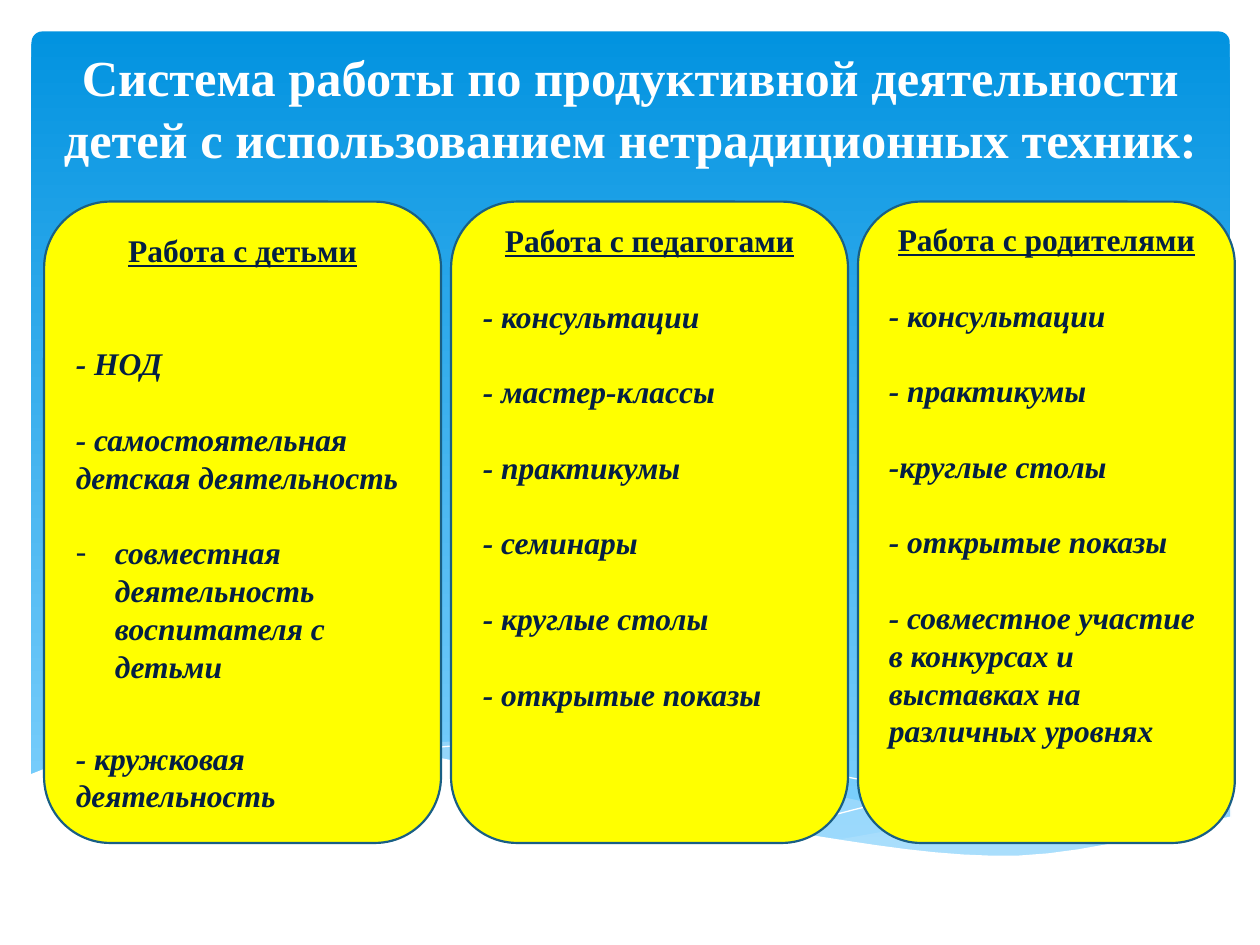
"""Build a slide with three cards on work with children, teachers and parents."""
from itertools import repeat
from lxml.etree import SubElement
from pptx import Presentation
from pptx.dml.color import RGBColor
from pptx.enum.shapes import MSO_SHAPE
from pptx.enum.text import MSO_ANCHOR, MSO_AUTO_SIZE, PP_ALIGN
from pptx.oxml.ns import qn
from pptx.util import Inches, Pt

THEME = {
    "font": "Times New Roman",
    "top": "0293E0",
    "base": "83D3FE",
    "wave": "C6E7FC",
    "white": "FFFFFF",
    "card": "FFFF00",
    "edge": "195F84",
    "ink": "041F44",
    "head": 28.8,
    "body": 18,
    "lead": 35.4,
    "row": 21.6,
}
STEPS = 8


def put(obj, tone=None, **form):
    """Set format values, and a solid fill if a tone is named."""
    if tone:
        obj.fill.solid()
        obj.fill.fore_color.rgb = RGBColor.from_string(THEME[tone])
    for key, value in form.items():
        setattr(obj, key, value)


def curve(knots):
    """Sample a smooth Catmull-Rom curve through the knots."""
    ends = [knots[0], *knots, knots[-1]]
    dots = [knots[0]]
    for a, b, c, d in zip(ends, ends[1:], ends[2:], ends[3:]):
        for step in range(1, STEPS + 1):
            t = step / STEPS
            dots.append(tuple(
                q + t / 2 * (r - p + t * (2 * p - 5 * q + 4 * r - s
                                          + t * (3 * q - p - 3 * r + s)))
                for p, q, r, s in zip(a, b, c, d)))
    return dots


deck = Presentation()
put(deck, slide_width=Inches(10), slide_height=Inches(7.5))
slide = deck.slides.add_slide(deck.slide_layouts[5])
shapes = slide.shapes

sky = shapes.add_shape(MSO_SHAPE.ROUNDED_RECTANGLE, Inches(0.25), Inches(0.25),
                       Inches(9.51), Inches(6.6))
sky.adjustments[0] = 0.013
sky.shadow.inherit = False
sky.fill.gradient()
sky.fill.gradient_angle = 270
for stop, tone, spot in zip(sky.fill.gradient_stops, ("top", "base"), (0, 1)):
    put(stop, position=spot)
    stop.color.rgb = RGBColor.from_string(THEME[tone])
sky.line.fill.background()

swell_top = [(9.77, 6.01), (8.62, 6.25), (7.54, 6.5), (6.62, 6.67)]
swell_low = [(6.62, 6.67), (7.46, 6.78), (8.36, 6.79), (9.14, 6.69), (9.77, 6.49)]
tide_top = [(8.94, 6.75), (7.76, 6.56), (6.3, 6.24), (5.15, 6), (4, 5.88), (2.87, 5.93)]
tide_low = [(2.87, 5.93), (4.5, 6.24), (6.02, 6.57), (7.23, 6.76), (8.08, 6.8), (8.94, 6.75)]
long_line = [(3.1, 5.97), (4.17, 5.89), (5.57, 5.98), (7.28, 6.28), (9.08, 6.73)]
short_line = [(6.14, 6.59), (7.49, 6.25), (8.67, 6), (9.76, 5.87)]
shore = [(9.77, 6.48), (8.09, 6.79), (6.26, 6.6), (4.47, 6.22), (2.92, 5.92),
         (1.61, 5.86), (0.76, 5.97), (0.23, 6.15)]
floor = [(0.23, 7.31), (9.77, 7.31)]

waves = [
    ("wave", 29, [swell_top, swell_low]),
    ("wave", 40, [tide_top, tide_low]),
    (None, None, [long_line]),
    (None, None, [short_line]),
    ("white", 100, [shore, floor]),
]
for tone, alpha, edges in waves:
    start, *rest = [(Inches(x), Inches(y)) for edge in edges for x, y in curve(edge)]
    pen = shapes.build_freeform(*start)
    pen.add_line_segments(rest, close=tone is not None)
    wave = pen.convert_to_shape()
    wave.shadow.inherit = False
    if tone:
        put(wave, tone)
        wave.line.fill.background()
        hue = wave.element.spPr.find(qn("a:solidFill"))[0]
        SubElement(hue, qn("a:alpha"), val=str(alpha * 1000))
    else:
        wave.fill.background()
        put(wave.line, "white", width=Pt(0))

title = shapes.title
title.element.getparent().append(title.element)
put(title, left=Inches(0.28), top=Inches(0.44), width=Inches(9.45), height=Inches(0.94))
frame = title.text_frame
frame.text = ("Система работы по продуктивной деятельности детей "
              "с использованием нетрадиционных техник:")
put(frame, word_wrap=True, auto_size=MSO_AUTO_SIZE.NONE, margin_top=0,
    margin_bottom=Inches(0.04), vertical_anchor=MSO_ANCHOR.BOTTOM)
para = frame.paragraphs[0]
put(para, alignment=PP_ALIGN.CENTER, line_spacing=Pt(THEME["lead"]))
put(para.font, "white", name=THEME["font"], size=Pt(THEME["head"]), bold=True)

CARD_LEFT, CARD_TOP, CARD_PITCH, CARD_HIGH = 0.35, 1.6, 3.23, 5.09
cards = [
    (3.15, 0.08, "Работа с детьми", (2, 1, 1, 1.43), [
        "- НОД",
        "- самостоятельная детская деятельность",
        "совместная деятельность воспитателя с детьми",
        "- кружковая деятельность"]),
    (3.15, 0, "Работа с педагогами", repeat(1), [
        "- консультации", "- мастер-классы", "- практикумы",
        "- семинары", "- круглые столы", "- открытые показы"]),
    (2.99, 0, "Работа с родителями", repeat(1), [
        "- консультации", "- практикумы", "-круглые столы", "- открытые показы",
        "- совместное участие в конкурсах и выставках на различных уровнях"]),
]
for place, (width, inset, head, gaps, items) in enumerate(cards):
    card = shapes.add_shape(
        MSO_SHAPE.ROUNDED_RECTANGLE, Inches(CARD_LEFT + place * CARD_PITCH),
        Inches(CARD_TOP), Inches(width), Inches(CARD_HIGH))
    card.shadow.inherit = False
    put(card, "card")
    put(card.line, "edge", width=Pt(1.25))
    frame = card.text_frame
    put(frame, word_wrap=True, vertical_anchor=MSO_ANCHOR.TOP,
        margin_top=Inches(inset), margin_bottom=0)

    para = frame.paragraphs[0]
    para.text = head
    put(para, alignment=PP_ALIGN.CENTER)
    put(para.font, underline=True)
    for text, gap in zip(items, gaps):
        para = frame.add_paragraph()
        para.text = text
        put(para, alignment=PP_ALIGN.LEFT, space_before=Pt(gap * THEME["row"]))
        if not text.startswith("-"):
            props = para._p.get_or_add_pPr()
            props.set("marL", str(Inches(0.31)))
            props.set("indent", str(-Inches(0.31)))
            SubElement(props, qn("a:buFont"), typeface=THEME["font"])
            SubElement(props, qn("a:buChar"), char="-")
        put(para.font, italic=True)
    for para in frame.paragraphs:
        put(para, line_spacing=Pt(THEME["row"]))
        put(para.font, "ink", name=THEME["font"], size=Pt(THEME["body"]), bold=True)

deck.save("out.pptx")
